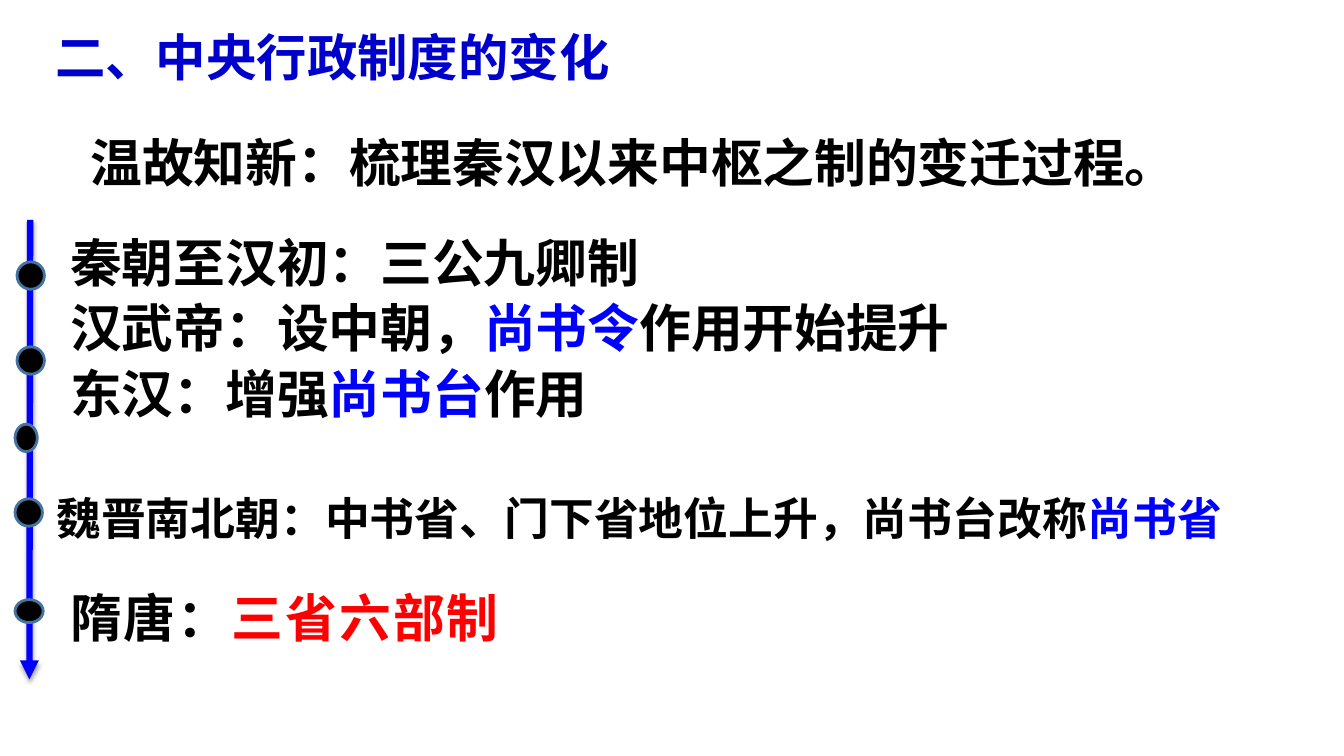
from lxml.etree import SubElement
from pptx import Presentation
from pptx.dml.color import RGBColor
from pptx.enum.shapes import MSO_CONNECTOR as Link, MSO_SHAPE as Shape
from pptx.enum.text import MSO_ANCHOR as Anchor
from pptx.oxml.ns import qn
from pptx.util import Cm, Pt

BLACK = RGBColor(0, 0, 0)
BLUE = RGBColor(0, 0, 255)
NAVY = RGBColor(0, 0, 204)
RED = RGBColor(255, 0, 0)
RIM = RGBColor(0x43, 0x73, 0x9E)
ARIAL, NOTO = "Arial", "Noto Sans CJK SC"

# Each paragraph is a list of (text, colour) runs.
HEAD = [[("二、中央行政制度的变化", NAVY)]]
TASK = [[("温故知新：梳理秦汉以来中枢之制的变迁过程。", BLACK)]]
HAN = [
    [("秦朝至汉初：三公九卿制", BLACK)],
    [("汉武帝：设中朝，", BLACK), ("尚书令", BLUE), ("作用开始提升", BLACK)],
    [("东汉：增强", BLACK), ("尚书台", BLUE), ("作用", BLACK)],
]
WEI = [[("魏晋南北朝：中书省、门下省地位上升，尚书台改称", BLACK), ("尚书省", BLUE)]]
TANG = [[("隋唐：", BLACK), ("三省六部制", RED)]]

# Box in cm, paragraphs, size, font, further settings
TEXTS = [
    ((2.03, 3.33, 30.94, 1.7), TASK, 37, ARIAL, dict(line=0.9, anchor=Anchor.MIDDLE)),
    ((1.52, 5.94, 30.15, 5.44), HAN, 37, ARIAL, dict(line=0.83, before=10)),
    ((1.17, 11.96, 32.7, 1.93), WEI, 32, ARIAL, dict(line=1.3, after=10, pad=0)),
    ((1.52, 14.3, 25.04, 1.93), TANG, 37, NOTO, dict(line=1.3, after=10, pad=0, gap=150)),
    ((1.14, 0.53, 15.6, 1.8), HEAD, 36, NOTO, {}),
]
AXIS = (0.76, 5.54, 0.74, 17.12)
DOTS = [
    (0.43, 6.6, 0.69, 0.69),
    (0.43, 8.74, 0.69, 0.69),
    (0.38, 10.69, 0.56, 0.69),
    (0.38, 12.57, 0.69, 0.69),
    (0.38, 15.11, 0.71, 0.58),
]


def add_text(slide, box, paras, size, face, line=None, before=0, after=0,
             pad=0.13, gap=None, anchor=Anchor.TOP):
    frame = slide.shapes.add_textbox(*map(Cm, box)).text_frame
    frame.word_wrap = True
    frame.vertical_anchor = anchor
    frame.margin_top = frame.margin_bottom = Cm(pad)
    for i, runs in enumerate(paras):
        para = frame.add_paragraph() if i else frame.paragraphs[0]
        para.font.size, para.font.name, para.font.bold = Pt(size), face, True
        para.space_before, para.space_after = Pt(before), Pt(after)
        if line:
            para.line_spacing = line
        for words, colour in runs:
            run = para.add_run()
            run.text = words
            run.font.color.rgb = colour
            props = run.font._element
            SubElement(props, qn("a:ea"), typeface=NOTO)
            if gap:
                props.set("spc", str(gap))


def add_axis(slide):
    axis = slide.shapes.add_connector(Link.STRAIGHT, *map(Cm, AXIS))
    axis.line.color.rgb = BLUE
    axis.line.width = Pt(4.5)
    SubElement(axis.line._get_or_add_ln(), qn("a:tailEnd"), type="triangle")
    effects = SubElement(axis._element.spPr, qn("a:effectLst"))
    shade = SubElement(effects, qn("a:outerShdw"), blurRad=str(Pt(3.1)),
                       dist=str(Pt(1.8)), dir="5400000", rotWithShape="0")
    tint = SubElement(shade, qn("a:srgbClr"), val=str(BLACK))
    SubElement(tint, qn("a:alpha"), val="35000")


def add_dot(slide, box):
    dot = slide.shapes.add_shape(Shape.OVAL, *map(Cm, box))
    dot.shadow.inherit = False
    dot.fill.solid()
    dot.fill.fore_color.rgb = BLACK
    dot.line.color.rgb = RIM
    dot.line.width = Pt(2)


def main():
    deck = Presentation()
    deck.slide_width, deck.slide_height = Cm(33.87), Cm(19.05)
    slide = deck.slides.add_slide(deck.slide_layouts[6])
    for box, paras, size, face, more in TEXTS:
        add_text(slide, box, paras, size, face, **more)
    add_axis(slide)
    for box in DOTS:
        add_dot(slide, box)
    deck.save("out.pptx")


if __name__ == "__main__":
    main()
